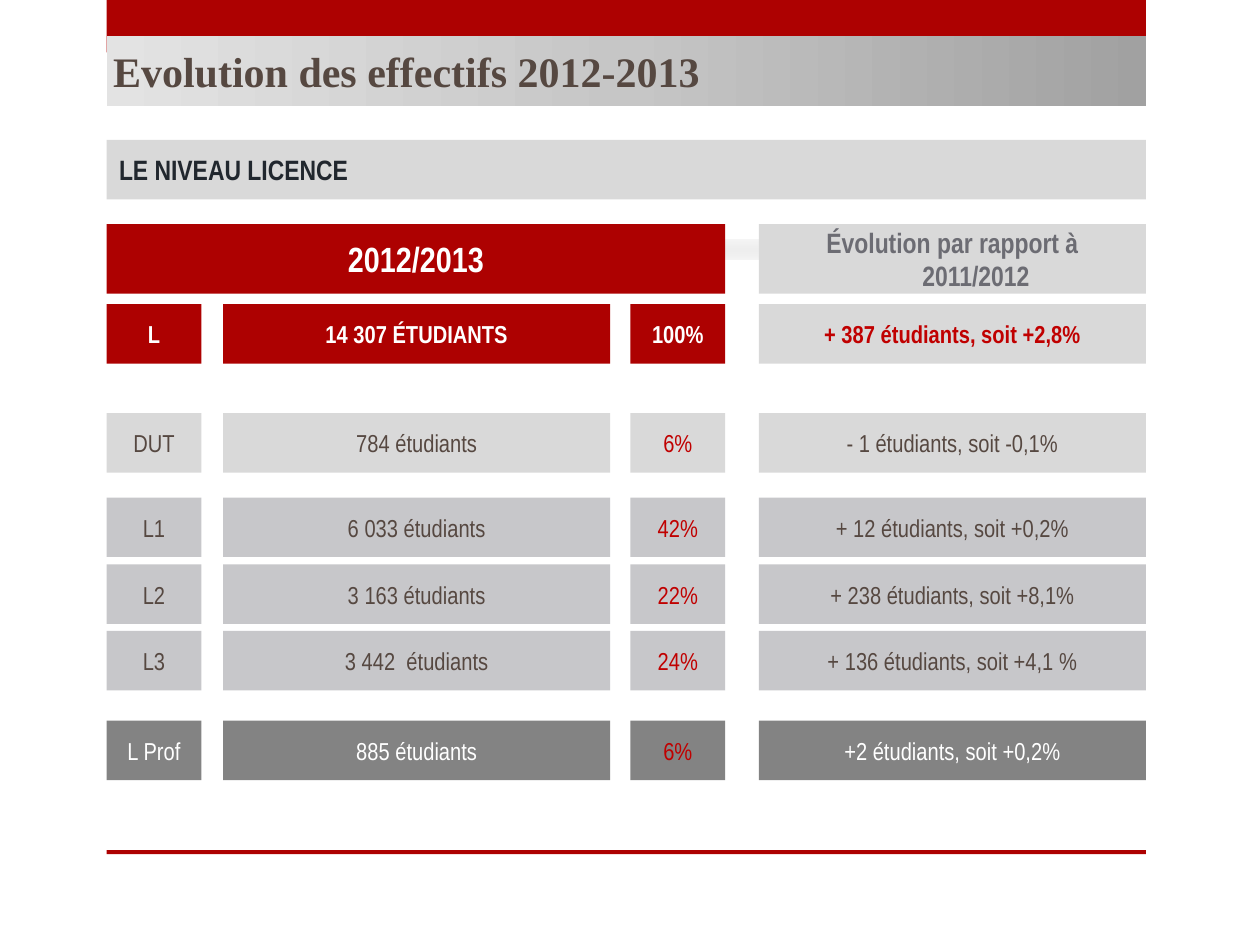
from copy import deepcopy
from lxml import etree
from pptx import Presentation
from pptx.dml.color import RGBColor
from pptx.enum import shapes, text
from pptx.oxml.ns import qn
from pptx.util import Cm, Pt

RED = RGBColor(0xAD, 0x01, 0x01)
ACCENT = RGBColor(0xC0, 0x00, 0x00)
WHITE = RGBColor(0xFF, 0xFF, 0xFF)
BROWN = RGBColor(0x56, 0x48, 0x41)
INK = RGBColor(0x21, 0x27, 0x2E)
SLATE = RGBColor(0x6C, 0x6C, 0x73)
LIGHT = RGBColor(0xD9, 0xD9, 0xD9)
MEDIUM = RGBColor(0xC7, 0xC7, 0xCA)
DARK = RGBColor(0x83, 0x83, 0x83)
TITLE_SHADES = [RGBColor(0xA1, 0xA1, 0xA1), RGBColor(0xC6, 0xC6, 0xC6), RGBColor(0xE3, 0xE3, 0xE3)]

TITLE = "Evolution des effectifs 2012-2013"
SECTION = "LE NIVEAU LICENCE"
YEAR = "2012/2013"
COMPARISON = "Évolution par rapport à 2011/2012"
TOTAL = ("L", "14 307 ÉTUDIANTS", "100%", "+ 387 étudiants, soit +2,8%")
LEVELS = [
    (8.33, LIGHT, BROWN, ("DUT", "784 étudiants", "6%", "- 1 étudiants, soit -0,1%")),
    (10.03, MEDIUM, BROWN, ("L1", "6 033 étudiants", "42%", "+ 12 étudiants, soit +0,2%")),
    (11.38, MEDIUM, BROWN, ("L2", "3 163 étudiants", "22%", "+ 238 étudiants, soit +8,1%")),
    (12.72, MEDIUM, BROWN, ("L3", "3 442  étudiants", "24%", "+ 136 étudiants, soit +4,1 %")),
    (14.53, DARK, WHITE, ("L Prof", "885 étudiants", "6%", "+2 étudiants, soit +0,2%")),
]

LEFT, WIDTH = 2.15, 20.95
COLUMNS = [(LEFT, 1.91), (4.5, 7.8), (12.71, 1.91), (15.3, 7.8)]
ROW_HEIGHT, HEADER_TOP, HEADER_HEIGHT, TOTAL_TOP = 1.2, 4.52, 1.4, 6.13

SECTION_SHADOW = (
    '<a:effectLst xmlns:a="http://schemas.openxmlformats.org/drawingml/2006/main">'
    '<a:outerShdw blurRad="152400" dist="317500" dir="5400000" sx="90000" sy="-19000" '
    'algn="b" rotWithShape="0"><a:srgbClr val="000000"><a:alpha val="15000"/></a:srgbClr>'
    '</a:outerShdw></a:effectLst>'
)

prs = Presentation()
prs.slide_width, prs.slide_height = Cm(25.4), Cm(19.05)
slide = prs.slides.add_slide(prs.slide_layouts[6])


def add_bar(left, top, width, height, fill):
    bar = slide.shapes.add_shape(
        shapes.MSO_SHAPE.RECTANGLE, Cm(left), Cm(top), Cm(width), Cm(height))
    bar.shadow.inherit = False
    bar.fill.solid()
    bar.fill.fore_color.rgb = fill
    bar.line.fill.background()
    return bar


def write(bar, words, color, size=14, bold=False, hanging=False,
          align=text.PP_ALIGN.CENTER, font="Arial Narrow"):
    frame = bar.text_frame
    frame.word_wrap = True
    frame.vertical_anchor = text.MSO_ANCHOR.MIDDLE
    frame.text = words
    paragraph = frame.paragraphs[0]
    paragraph.alignment = align
    if hanging:
        properties = paragraph._p.get_or_add_pPr()
        properties.set("marL", str(Cm(0.95)))
        properties.set("indent", str(-Cm(0.95)))
    style = paragraph.runs[0].font
    style.name, style.size, style.bold = font, Pt(size), bold
    style.color.rgb = color


add_bar(LEFT, 0, WIDTH, 1.06, RED)
add_bar(LEFT, 17.14, WIDTH, 0.08, RED)

title = add_bar(LEFT, 0.73, WIDTH, 1.4, LIGHT)
title.fill.gradient()
title.fill.gradient_angle = 180
stop_list = title._element.spPr.find(".//" + qn("a:gsLst"))
stop_list.insert(1, deepcopy(stop_list[0]))
for i, (stop, shade) in enumerate(zip(title.fill.gradient_stops, TITLE_SHADES)):
    stop.position = i / 2
    stop.color.rgb = shade
write(title, TITLE, BROWN, 24, True, align=text.PP_ALIGN.LEFT, font="Times New Roman")
title.text_frame.margin_left = title.text_frame.margin_right = Cm(0.13)
title.text_frame.margin_top = title.text_frame.margin_bottom = 0

section = add_bar(LEFT, 2.82, WIDTH, ROW_HEIGHT, LIGHT)
properties = section._element.spPr
properties.replace(properties.find(qn("a:effectLst")), etree.fromstring(SECTION_SHADOW))
write(section, SECTION, INK, 16, True, True, text.PP_ALIGN.LEFT)

change_left, change_width = COLUMNS[3]
year_width = sum(COLUMNS[2]) - LEFT
write(add_bar(change_left, HEADER_TOP, change_width, HEADER_HEIGHT, LIGHT),
      COMPARISON, SLATE, 16, True, True)
write(add_bar(LEFT, HEADER_TOP, year_width, HEADER_HEIGHT, RED), YEAR, WHITE, 20, True, True)

for i, ((left, width), words) in enumerate(zip(COLUMNS, TOTAL)):
    fill, color = (LIGHT, ACCENT) if i == 3 else (RED, WHITE)
    write(add_bar(left, TOTAL_TOP, width, ROW_HEIGHT, fill), words, color, bold=True, hanging=True)

for top, fill, color, cells in LEVELS:
    for i, ((left, width), words) in enumerate(zip(COLUMNS, cells)):
        write(add_bar(left, top, width, ROW_HEIGHT, fill), words, ACCENT if i == 2 else color)

prs.save("out.pptx")
